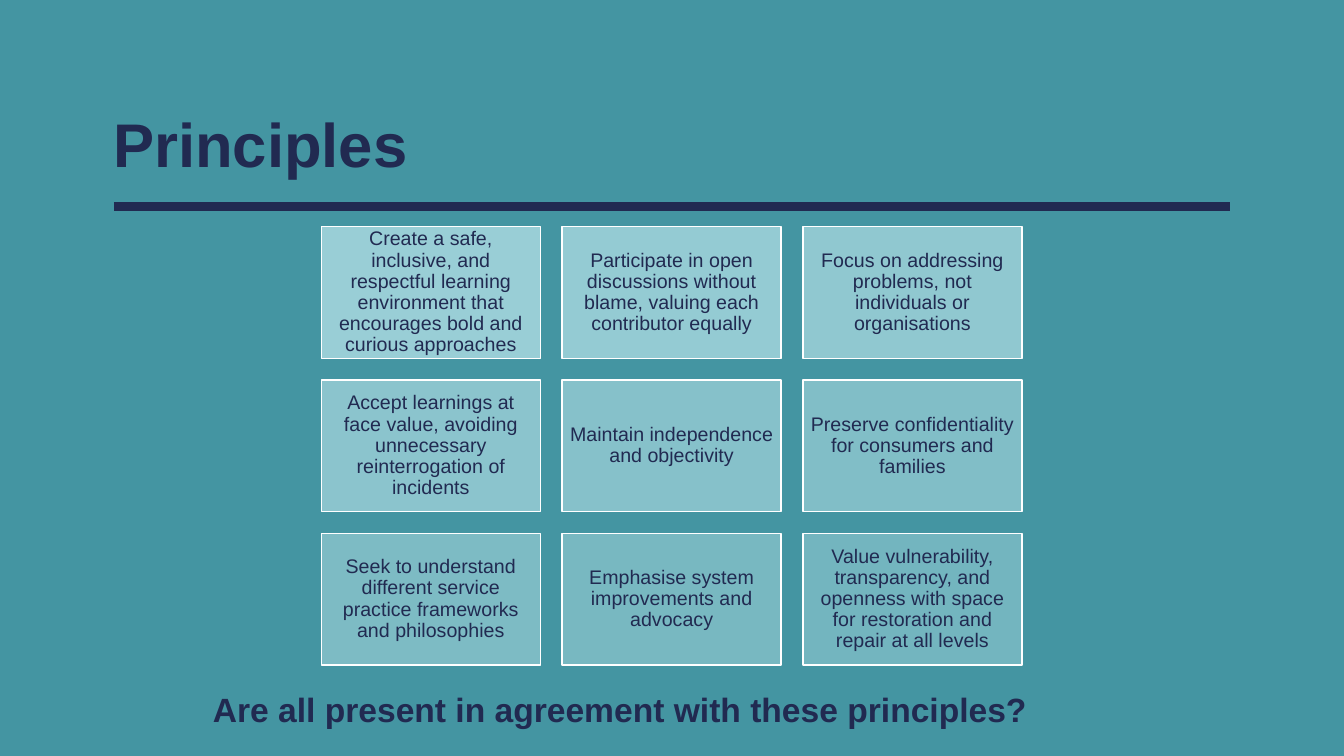
from lxml import etree
from pptx import Presentation
from pptx import util as u
from pptx.dml.color import RGBColor
from pptx.enum import shapes, text
from pptx.oxml import ns

TEAL = RGBColor(0x44, 0x95, 0xA2)
NAVY = RGBColor(0x21, 0x2A, 0x51)
PALE = RGBColor(0xA3, 0xD5, 0xDC)
WHITE = RGBColor(0xFF, 0xFF, 0xFF)
FONT = "Arial"

PRINCIPLES = [
    "Create a safe, inclusive, and respectful learning environment that encourages bold and curious approaches",
    "Participate in open discussions without blame, valuing each contributor equally",
    "Focus on addressing problems, not individuals or organisations",
    "Accept learnings at face value, avoiding unnecessary reinterrogation of incidents",
    "Maintain independence and objectivity",
    "Preserve confidentiality for consumers and families",
    "Seek to understand different service practice frameworks and philosophies",
    "Emphasise system improvements and advocacy",
    "Value vulnerability, transparency, and openness with space for restoration and repair at all levels",
]
COLUMNS = 3
LEFT, TOP = 229.5, 162
CARD_W, CARD_H = 156.5, 94
PITCH_X, PITCH_Y = 172, 109.5


def write(tf, words, size=14, bold=False, align=text.PP_ALIGN.CENTER,
          anchor=text.MSO_ANCHOR.MIDDLE, insets=(4.2, 4.2, 4.2, 4.2)):
    tf.word_wrap = True
    tf.vertical_anchor = anchor
    tf.margin_left, tf.margin_top, tf.margin_right, tf.margin_bottom = map(u.Pt, insets)
    p = tf.paragraphs[0]
    p.alignment = align
    p.line_spacing = 0.9
    r = p.add_run()
    r.text = words
    r.font.name = FONT
    r.font.size = u.Pt(size)
    r.font.bold = bold
    r.font.color.rgb = NAVY


class Deck:
    def __init__(self, s, color, background):
        self.s = s
        self.color = color
        s.background.fill.solid()
        s.background.fill.fore_color.rgb = background

    def label(self, x, y, w, h, words, **fmt):
        sp = self.s.shapes.add_textbox(*map(u.Pt, (x, y, w, h)))
        write(sp.text_frame, words, **fmt)

    def rule(self, x1, y1, x2, y2, width):
        sp = self.s.shapes.add_connector(
            shapes.MSO_CONNECTOR.STRAIGHT, *map(u.Pt, (x1, y1, x2, y2)))
        sp.line.color.rgb = self.color
        sp.line.width = u.Pt(width)
        etree.SubElement(sp._element.spPr, ns.qn("a:effectLst"))

    def card(self, x, y, w, h, words, opacity):
        sp = self.s.shapes.add_shape(
            shapes.MSO_SHAPE.RECTANGLE, *map(u.Pt, (x, y, w, h)))
        sp.shadow.inherit = False
        sp.fill.solid()
        sp.fill.fore_color.rgb = PALE
        clr = sp._element.spPr.find(".//" + ns.qn("a:srgbClr"))
        etree.SubElement(clr, ns.qn("a:alpha"), val=str(opacity * 1000))
        sp.line.color.rgb = WHITE
        sp.line.width = u.Pt(1)
        write(sp.text_frame, words)


def main():
    prs = Presentation()
    prs.slide_width, prs.slide_height = u.Pt(960), u.Pt(540)
    deck = Deck(prs.slides.add_slide(prs.slide_layouts[6]), NAVY, TEAL)

    deck.rule(81.4, 147.4, 878.4, 147.4, 6)
    deck.label(80.9, 78.5, 615, 51, "Principles", size=44, bold=True,
               align=text.PP_ALIGN.LEFT, anchor=text.MSO_ANCHOR.BOTTOM,
               insets=(0, 0, 0, 0))
    for i, words in enumerate(PRINCIPLES):
        row, col = divmod(i, COLUMNS)
        deck.card(LEFT + col * PITCH_X, TOP + row * PITCH_Y, CARD_W, CARD_H,
                  words, opacity=90 - 5 * i)
    deck.label(28.8, 468, 828, 66,
               "Are all present in agreement with these principles?",
               size=24, bold=True, anchor=text.MSO_ANCHOR.TOP,
               insets=(7.2, 27, 7.2, 3.6))

    prs.save("out.pptx")


if __name__ == "__main__":
    main()
